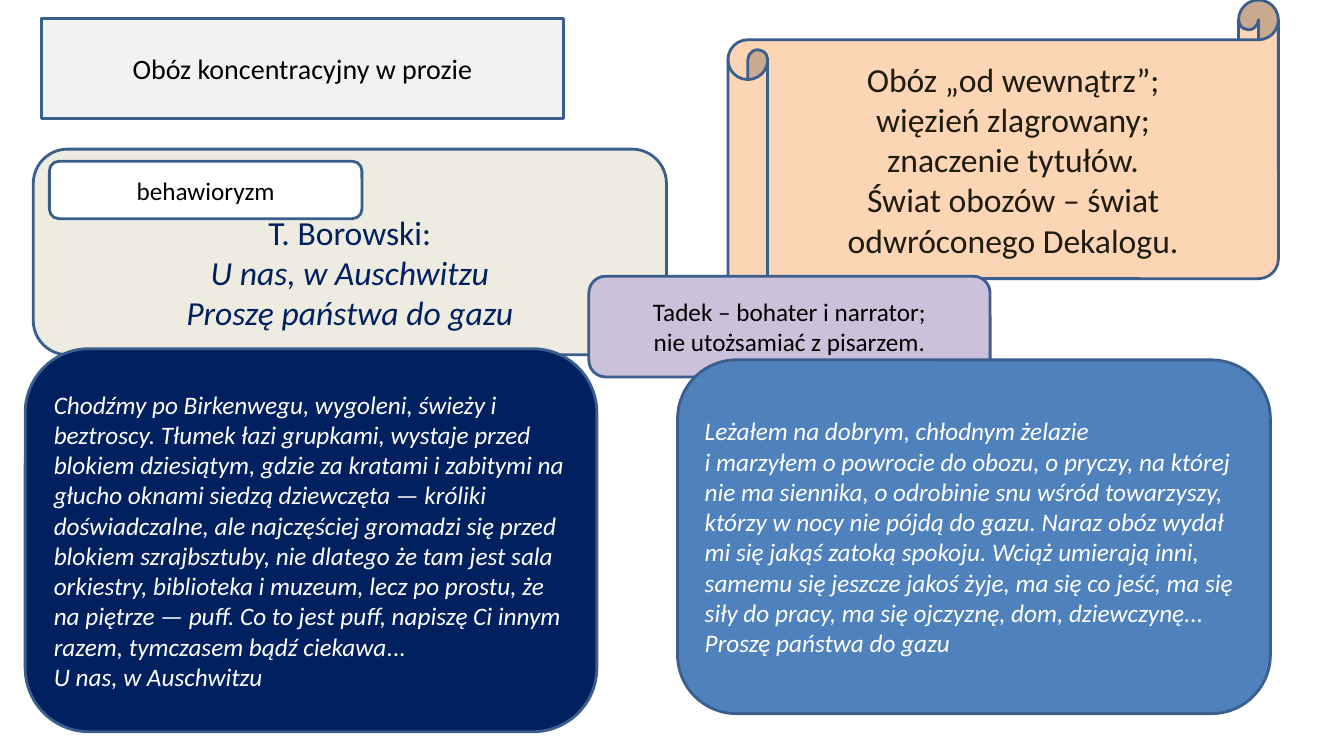
from dataclasses import dataclass

from lxml.etree import SubElement
from pptx import Presentation
from pptx.dml.color import RGBColor
from pptx.enum.shapes import MSO_SHAPE
from pptx.enum.text import MSO_ANCHOR, MSO_AUTO_SIZE, PP_ALIGN
from pptx.oxml.ns import qn
from pptx.util import Inches, Pt


@dataclass(frozen=True)
class Theme:
    font: str = "Calibri"
    large: int = 24
    title: int = 20
    body: int = 18
    line_width: int = 2
    outline: str = "3A5F8C"
    black: str = "000000"
    white: str = "FFFFFF"
    ink: str = "1E1C11"
    navy: str = "002060"
    blue: str = "4F81BD"
    grey: str = "F2F2F2"
    cream: str = "EEECE1"
    peach: str = "FCD5B5"
    lilac: str = "CCC1DA"


class SlideBuilder:
    def __init__(self, slide, theme):
        self.s = slide
        self.theme = theme

    def format(self, sp, fill, lines, size, color, italic=(), align=PP_ALIGN.CENTER):
        """Style a shape and fill it with paragraphs; italic holds the indexes of slanted ones."""
        sp.fill.solid()
        sp.fill.fore_color.rgb = RGBColor.from_string(fill)
        sp.line.color.rgb = RGBColor.from_string(self.theme.outline)
        sp.line.width = Pt(self.theme.line_width)
        tf = sp.text_frame
        tf.word_wrap = True
        tf.auto_size = MSO_AUTO_SIZE.NONE
        tf.vertical_anchor = MSO_ANCHOR.MIDDLE
        for i, line in enumerate(lines):
            p = tf.paragraphs[0] if i == 0 else tf.add_paragraph()
            p.text = line
            p.alignment = align
            p.font.name = self.theme.font
            p.font.size = Pt(size)
            p.font.italic = i in italic
            p.font.color.rgb = RGBColor.from_string(color)

    def title(self, box, text):
        sp = self.s.shapes.title
        sp.left, sp.top, sp.width, sp.height = map(Inches, box)
        geometry = SubElement(sp._element.spPr, qn("a:prstGeom"), prst="roundRect")
        SubElement(geometry, qn("a:avLst"))
        self.format(sp, self.theme.grey, [text], self.theme.title, self.theme.black)

    def card(self, box, fill, lines, size, color, shape=MSO_SHAPE.ROUNDED_RECTANGLE, **style):
        sp = self.s.shapes.add_shape(shape, *map(Inches, box))
        sp.shadow.inherit = False
        self.format(sp, fill, lines, size, color, **style)
        return sp

    def quote(self, box, fill, text, source):
        return self.card(box, fill, [text, source], self.theme.body, self.theme.white,
                         italic=(0, 1), align=PP_ALIGN.LEFT)


def main():
    prs = Presentation()
    prs.slide_width, prs.slide_height = Inches(13.33), Inches(7.5)
    theme = Theme()
    b = SlideBuilder(prs.slides.add_slide(prs.slide_layouts[5]), theme)

    b.title((0.41, 0.18, 5.18, 1), "Obóz koncentracyjny w prozie")
    works = b.card((0.33, 1.48, 6.28, 2.04), theme.cream,
                   ["T. Borowski:", "U nas, w Auschwitzu", "Proszę państwa do gazu"],
                   theme.large, theme.navy, italic=(1, 2))
    works.text_frame.margin_top = Inches(0.45)
    b.card((7.22, 0, 5.46, 3.16), theme.peach,
           ["Obóz „od wewnątrz”;", "więzień zlagrowany;", "znaczenie tytułów.",
            "Świat obozów – świat odwróconego Dekalogu."],
           theme.large, theme.ink, shape=MSO_SHAPE.HORIZONTAL_SCROLL)
    b.card((5.84, 2.74, 3.98, 1), theme.lilac,
           ["Tadek – bohater i narrator;", "nie utożsamiać z pisarzem."],
           theme.body, theme.black)

    camp = b.quote(
        (0.25, 3.46, 5.67, 3.8), theme.navy,
        "Chodźmy po Birkenwegu, wygoleni, świeży i beztroscy. Tłumek łazi grupkami, "
        "wystaje przed blokiem dziesiątym, gdzie za kratami i zabitymi na głucho oknami "
        "siedzą dziewczęta — króliki doświadczalne, ale najczęściej gromadzi się przed "
        "blokiem szrajbsztuby, nie dlatego że tam jest sala orkiestry, biblioteka i muzeum, "
        "lecz po prostu, że na piętrze — puff. Co to jest puff, napiszę Ci innym razem, "
        "tymczasem bądź ciekawa",
        "U nas, w Auschwitzu")
    ellipsis = camp.text_frame.paragraphs[0].add_run()
    ellipsis.text = "..."
    ellipsis.font.italic = False

    b.quote(
        (6.72, 3.57, 5.88, 3.51), theme.blue,
        "Leżałem na dobrym, chłodnym żelazie\vi marzyłem o powrocie do obozu, o pryczy, "
        "na której nie ma siennika, o odrobinie snu wśród towarzyszy, którzy w nocy nie "
        "pójdą do gazu. Naraz obóz wydał mi się jakąś zatoką spokoju. Wciąż umierają inni, "
        "samemu się jeszcze jakoś żyje, ma się co jeść, ma się siły do pracy, ma się "
        "ojczyznę, dom, dziewczynę...",
        "Proszę państwa do gazu")
    b.card((0.49, 1.6, 3.1, 0.57), theme.white, ["behawioryzm"], theme.body, theme.black)

    prs.save("out.pptx")


if __name__ == "__main__":
    main()
